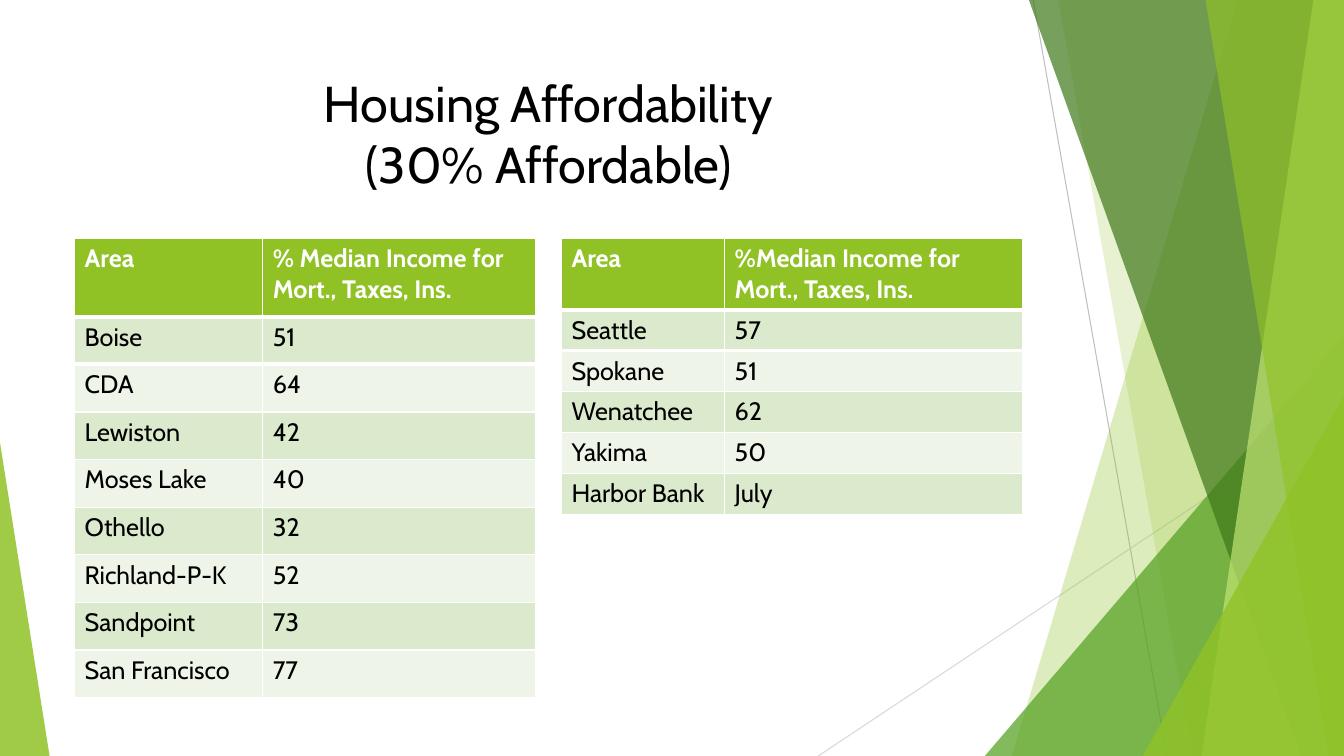
from lxml import etree
from pptx import Presentation
from pptx.dml.color import RGBColor
from pptx.enum.shapes import MSO_CONNECTOR, MSO_SHAPE
from pptx.enum.text import MSO_ANCHOR, PP_ALIGN
from pptx.oxml.ns import qn
from pptx.util import Cm, Pt

STRAIGHT = MSO_CONNECTOR.STRAIGHT
TRIANGLE = MSO_SHAPE.ISOSCELES_TRIANGLE
TOP = MSO_ANCHOR.TOP
CENTER = PP_ALIGN.CENTER

FONT = "Cabin"
WIDTH, HEIGHT = 33.87, 19.05
COLORS = {
    "lime": "90C226", "green": "54A021", "forest": "3F7819", "pale": "C0E474",
    "gray": "BFBFBF", "light gray": "D9D9D9", "black": "000000", "white": "FFFFFF",
    "odd row": "DBE9CD", "even row": "EEF4E8",
}


def color(name):
    return RGBColor.from_string(COLORS[name])


def paint(shape, fill_name, opacity):
    shape.shadow.inherit = False
    shape.line.fill.background()
    shape.fill.solid()
    shape.fill.fore_color.rgb = color(fill_name)
    rgb = shape._element.spPr.find(qn("a:solidFill")).find(qn("a:srgbClr"))
    etree.SubElement(rgb, qn("a:alpha")).set("val", str(opacity * 1000))


prs = Presentation()
prs.slide_width, prs.slide_height = Cm(WIDTH), Cm(HEIGHT)
slide = prs.slides.add_slide(prs.slide_layouts[5])

# Thin background rays
rays = [
    (26.04, 0, 29.41, HEIGHT, "gray"),
    (WIDTH, 10.24, 20.62, HEIGHT, "light gray"),
]
for x1, y1, x2, y2, ray_color in rays:
    ray = slide.shapes.add_connector(STRAIGHT, Cm(x1), Cm(y1), Cm(x2), Cm(y2))
    ray.line.color.rgb = color(ray_color)
    ray.line.width = Pt(0.75)
    etree.SubElement(ray._element.spPr, qn("a:effectLst"))

# Translucent facets: slanted bands reach the right edge (top x, bottom x),
# triangles stand on the bottom edge (left, width, height, apex)
facets = [
    ("band", (31.19, 25.5), "lime", 30),
    ("band", (26.67, 30.05), "lime", 20),
    ("triangle", (24.82, 9.05, 10.59, 1), "green", 72),
    ("band", (25.93, 32.79), "forest", 70),
    ("band", (33.1, 30.28), "pale", 70),
    ("band", (30.38, 33.48), "lime", 65),
    ("triangle", (28.8, 5.07, 9.07, 1), "lime", 80),
    ("triangle", (0, 1.25, 7.9, 0), "lime", 85),
]
for kind, geometry, fill_name, opacity in facets:
    if kind == "band":
        top_x, bottom_x = geometry
        outline = slide.shapes.build_freeform(Cm(top_x), Cm(0))
        outline.add_line_segments([
            (Cm(WIDTH), Cm(0)), (Cm(WIDTH), Cm(HEIGHT)), (Cm(bottom_x), Cm(HEIGHT)),
        ])
        facet = outline.convert_to_shape()
    else:
        left, width, height, apex = geometry
        facet = slide.shapes.add_shape(
            TRIANGLE, Cm(left), Cm(HEIGHT - height), Cm(width), Cm(height))
        facet.adjustments[0] = apex
    paint(facet, fill_name, opacity)

# Title
title = slide.shapes.title
title.left, title.top, title.width, title.height = Cm(1.88), Cm(1.7), Cm(23.88), Cm(3.66)
title.text_frame.vertical_anchor = TOP
heading = title.text_frame.paragraphs[0]
heading.add_run().text = "Housing Affordability"
heading.add_line_break()
heading.add_run().text = "(30% Affordable)"
heading.alignment = CENTER
heading.font.name = FONT
heading.font.size = Pt(36)
heading.font.color.rgb = color("black")

# Affordability tables: left, column widths, header height, row height, rows
tables = [
    (1.88, (4.74, 6.88), 1.98, 1.2, [
        ("Area", "% Median Income for Mort., Taxes, Ins."),
        ("Boise", "51"), ("CDA", "64"), ("Lewiston", "42"), ("Moses Lake", "40"),
        ("Othello", "32"), ("Richland-P-K", "52"), ("Sandpoint", "73"),
        ("San Francisco", "77"),
    ]),
    (14.15, (4.11, 7.52), 1.77, 1.03, [
        ("Area", "%Median Income for Mort., Taxes, Ins."),
        ("Seattle", "57"), ("Spokane", "51"), ("Wenatchee", "62"), ("Yakima", "50"),
        ("Harbor Bank", "July"),
    ]),
]
for left, widths, header_height, row_height, rows in tables:
    total_height = header_height + row_height * (len(rows) - 1)
    table = slide.shapes.add_table(
        len(rows), len(widths), Cm(left), Cm(6), Cm(sum(widths)), Cm(total_height)).table
    for column, width in zip(table.columns, widths):
        column.width = Cm(width)
    for r, row in enumerate(rows):
        is_header = r == 0
        table.rows[r].height = Cm(header_height if is_header else row_height)
        row_fill = "lime" if is_header else "odd row" if r % 2 else "even row"
        for c, text in enumerate(row):
            cell = table.cell(r, c)
            cell.fill.solid()
            cell.fill.fore_color.rgb = color(row_fill)
            cell.text = text
            font = cell.text_frame.paragraphs[0].font
            font.name = FONT
            font.size = Pt(18)
            font.bold = is_header
            font.color.rgb = color("white" if is_header else "black")
            # Thick rule between the header and the first row
            if r < 2:
                rule = etree.Element(qn("a:lnB" if is_header else "a:lnT"), w=str(Pt(3)))
                rule_fill = etree.SubElement(rule, qn("a:solidFill"))
                etree.SubElement(rule_fill, qn("a:srgbClr"), val=COLORS["white"])
                cell._tc.get_or_add_tcPr().insert(0, rule)

prs.save("out.pptx")
